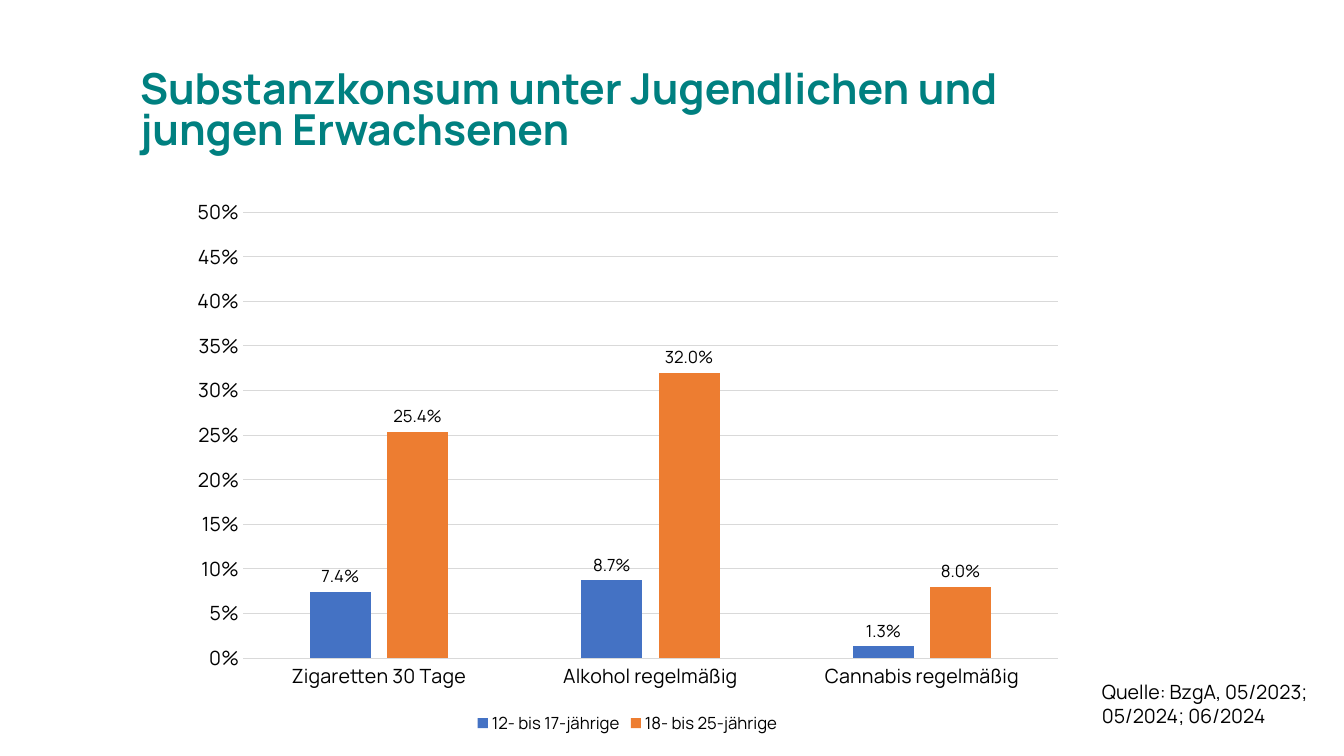
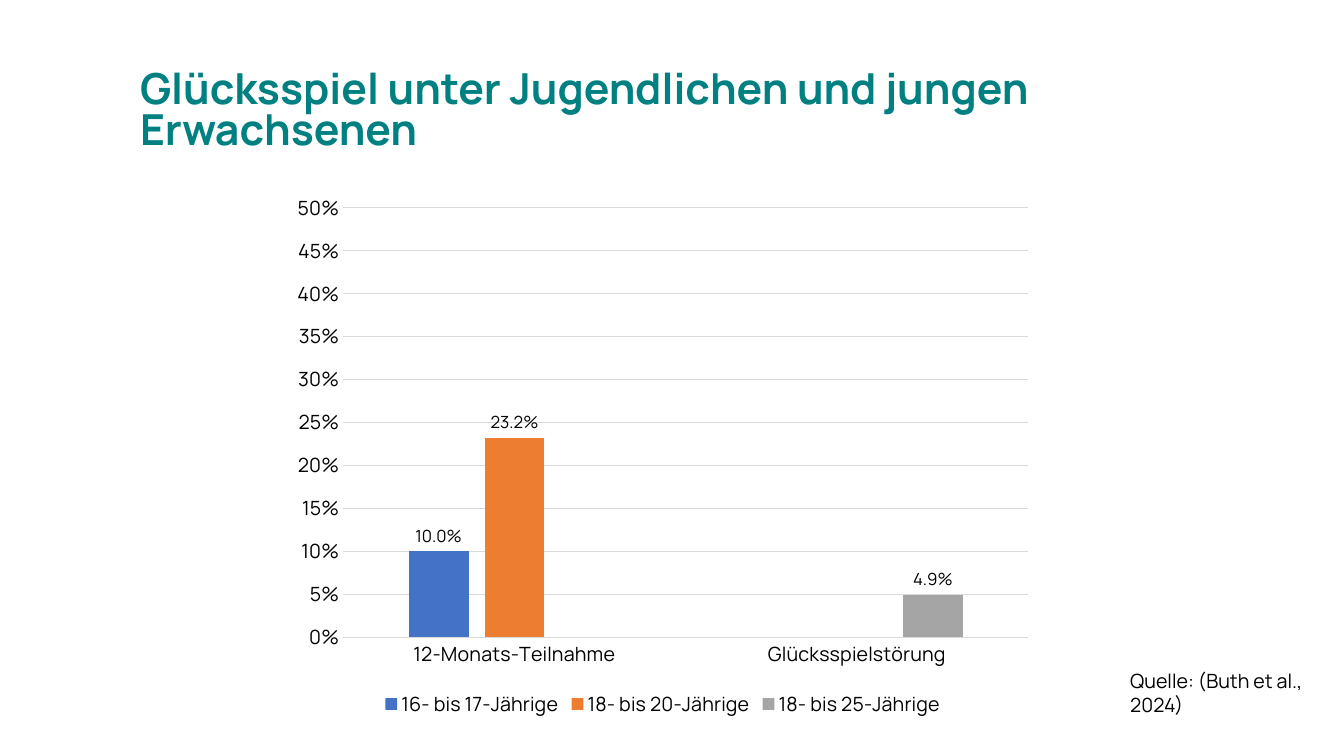
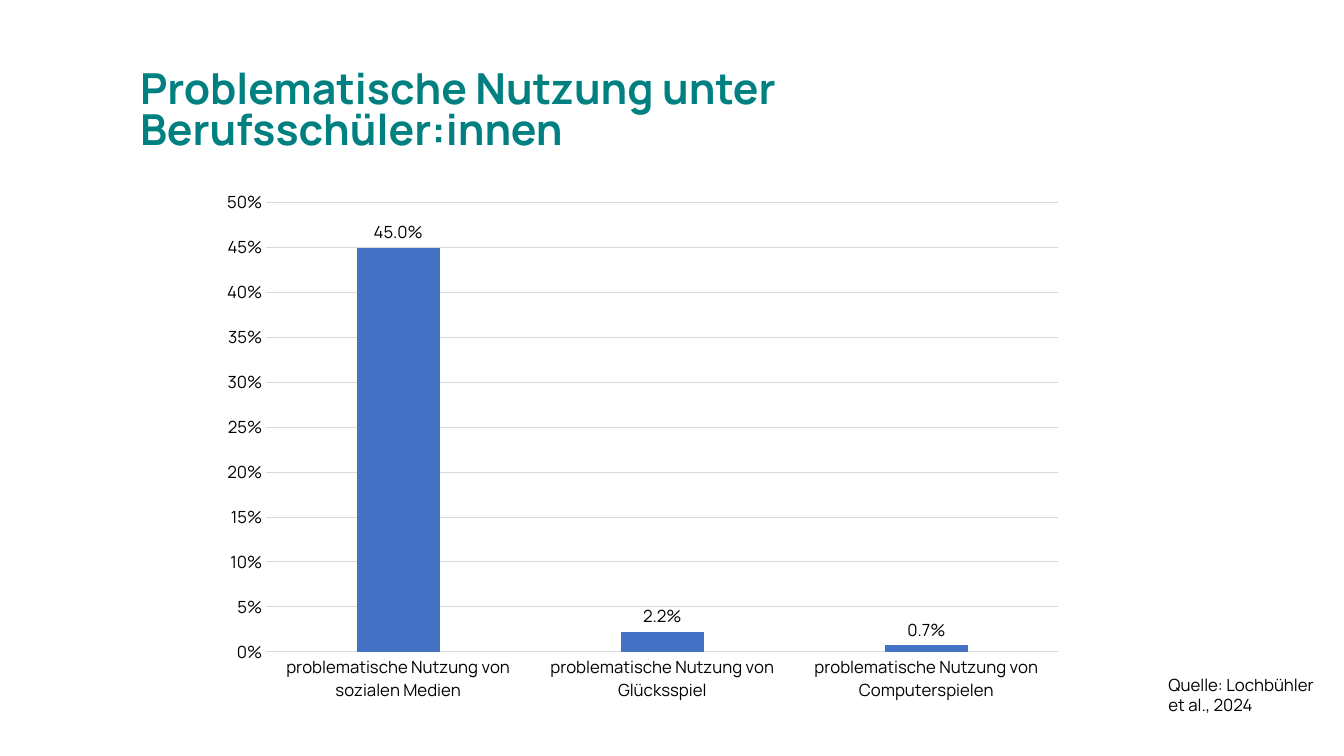
from pptx import Presentation
from pptx.chart.data import CategoryChartData
from pptx.dml.color import RGBColor
from pptx.enum.chart import XL_CHART_TYPE, XL_LABEL_POSITION, XL_LEGEND_POSITION, XL_TICK_MARK
from pptx.enum.text import MSO_ANCHOR
from pptx.util import Inches, Pt

TEAL = RGBColor(0x00, 0x80, 0x80)
BLACK = RGBColor(0x00, 0x00, 0x00)
GREY = RGBColor(0xD9, 0xD9, 0xD9)
BARS = [RGBColor(0x44, 0x72, 0xC4), RGBColor(0xED, 0x7D, 0x31), RGBColor(0xA5, 0xA5, 0xA5)]
FACE = "Manrope"


class Deck:
    """Holds the style and the current slide; boxes are in percent of the slide."""

    def __init__(self):
        self.prs = Presentation()
        self.prs.slide_width = Inches(13.33)
        self.prs.slide_height = Inches(7.5)
        self.slide = None

    def place(self, box):
        wide, high = self.prs.slide_width, self.prs.slide_height
        return [round(part * side / 100) for part, side in zip(box, (wide, high, wide, high))]

    def style(self, font, size, color=BLACK, bold=False):
        font.name, font.size, font.bold = FACE, Pt(size), bold
        font.color.rgb = color

    def text(self, words, box, size, color=BLACK, bold=False):
        frame = self.slide.shapes.add_textbox(*self.place(box)).text_frame
        frame.word_wrap = True
        para = frame.paragraphs[0]
        para.text = words
        self.style(para.font, size, color, bold)
        return frame

    def page(self, title):
        self.slide = self.prs.slides.add_slide(self.prs.slide_layouts[6])
        frame = self.text(title, (9.68, 8.67, 70.36, 12.53), 30.5, TEAL, True)
        frame.vertical_anchor = MSO_ANCHOR.MIDDLE
        frame.paragraphs[0].line_spacing = 0.8
        frame.paragraphs[0].space_before = Pt(10)

    def source(self, words, box, size=14):
        return self.text(words, box, size).paragraphs[0]

    def chart(self, box, cats, rows, size=14, key=None):
        data = CategoryChartData(number_format="0%")
        data.categories = cats
        for name, vals in rows:
            data.add_series(name, vals)
        kind = XL_CHART_TYPE.COLUMN_CLUSTERED
        chart = self.slide.shapes.add_chart(kind, *self.place(box), data).chart
        chart.has_title = False
        chart.font.name, chart.font.size = "Calibri", Pt(10)
        chart.font.color.rgb = BLACK

        # Legend, where a key size is given
        chart.has_legend = key is not None
        if key:
            chart.legend.position = XL_LEGEND_POSITION.BOTTOM
            chart.legend.include_in_layout = False
            self.style(chart.legend.font, key)

        # Axes and grid
        for axis in (chart.category_axis, chart.value_axis):
            axis.major_tick_mark = axis.minor_tick_mark = XL_TICK_MARK.NONE
            self.style(axis.tick_labels.font, size)
        scale = chart.value_axis
        scale.minimum_scale, scale.maximum_scale, scale.major_unit = 0, 0.5, 0.05
        scale.tick_labels.number_format = "0%"
        scale.tick_labels.number_format_is_linked = False
        scale.format.line.fill.background()
        for line in (chart.category_axis.format.line, scale.major_gridlines.format.line):
            line.color.rgb, line.width = GREY, Pt(0.75)

        # Bars and their values
        plot = chart.plots[0]
        plot.gap_width, plot.overlap, plot.vary_by_categories = 219, -27, False
        for bar, color in zip(plot.series, BARS):
            bar.format.fill.solid()
            bar.format.fill.fore_color.rgb = color
            tags = bar.data_labels
            tags.show_value = True
            tags.number_format, tags.number_format_is_linked = "0.0%", False
            tags.position = XL_LABEL_POSITION.OUTSIDE_END
            self.style(tags.font, 12)


def main():
    deck = Deck()

    # Substance use
    deck.page("Substanzkonsum unter Jugendlichen und jungen Erwachsenen")
    deck.chart((13.35, 24.8, 66.69, 72.93),
               ["Zigaretten 30 Tage", "Alkohol regelmäßig", "Cannabis regelmäßig"],
               [("12- bis 17-jährige", (0.074, 0.087, 0.013)),
                ("18- bis 25-jährige", (0.254, 0.32, 0.08))], key=12)
    deck.source("Quelle: BzgA, 05/2023; 05/2024; 06/2024", (81.25, 89.33, 18.08, 7.6))

    # Gambling
    deck.page("Glücksspiel unter Jugendlichen und jungen Erwachsenen")
    deck.source("Quelle: (Buth et al., 2024)", (83.35, 87.87, 15.45, 7.6))
    deck.chart((21, 24.27, 56.64, 71.2),
               ["12-Monats-Teilnahme", "Glücksspielstörung"],
               [("16- bis 17-Jährige", (0.1, None)),
                ("18- bis 20-Jährige", (0.232, None)),
                ("18- bis 25-Jährige", (None, 0.049))], key=14)

    # Vocational students
    deck.page("Problematische Nutzung unter Berufsschüler:innen")
    topics = ("sozialen Medien", "Glücksspiel", "Computerspielen")
    deck.chart((15.6, 23.87, 64.44, 70.4),
               [f"problematische Nutzung von {topic}" for topic in topics],
               [("Series 1", (0.45, 0.022, 0.007))], size=12)
    note = deck.source("Quelle: Lochbühler et al., 2024", (86.2, 88.53, 13.05, 6.67), 12)
    note.space_before, note.space_after = Pt(10), Pt(12)

    deck.prs.save("out.pptx")


if __name__ == "__main__":
    main()
